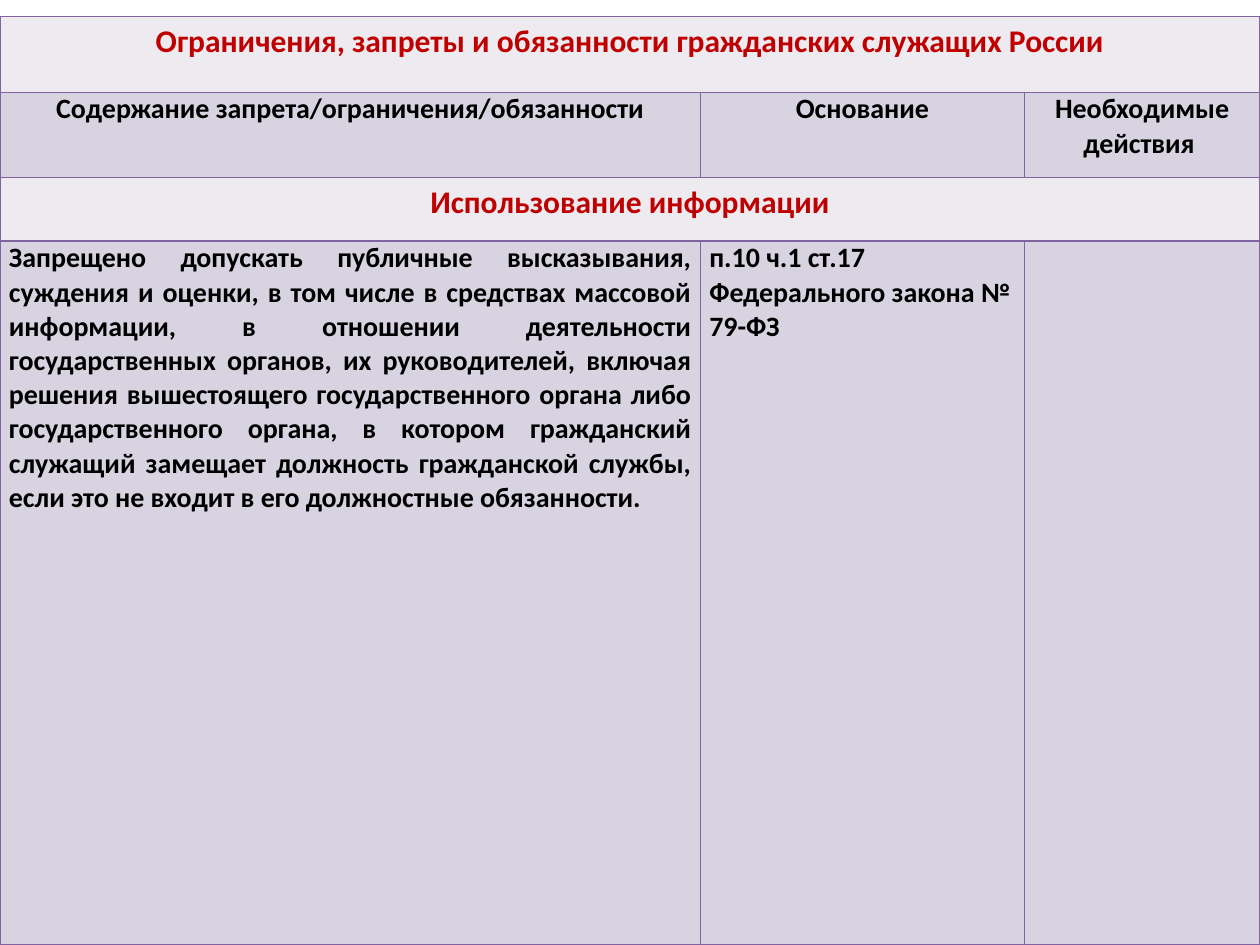
from lxml import etree
from pptx import Presentation
from pptx.dml.color import RGBColor
from pptx.enum.text import PP_ALIGN
from pptx.oxml.ns import qn
from pptx.util import Cm, Pt

CENTER, JUSTIFY, LEFT = PP_ALIGN.CENTER, PP_ALIGN.JUSTIFY, PP_ALIGN.LEFT

THEME = {
    "font": "Calibri",
    "heading": {"size": 18, "color": "C00000", "fill": "EDEAF0"},
    "body": {"size": 16, "color": "000000", "fill": "D8D3E0"},
    "border": "8064A2",
    "border_width": 1,
}

COLUMN_WIDTHS = (14.12, 6.53, 4.75)
TABLE_TOP = 0.33
INSET = 0.18

ROWS = [
    (1.53, "heading", [("Ограничения, запреты и обязанности гражданских служащих России", CENTER)]),
    (1.72, "body", [
        ("Содержание запрета/ограничения/обязанности", CENTER),
        ("Основание", CENTER),
        ("Необходимые действия ", CENTER),
    ]),
    (1.28, "heading", [("Использование информации", CENTER)]),
    (14.19, "body", [
        ("Запрещено допускать публичные высказывания, суждения и оценки, "
         "в том числе в средствах массовой информации, в отношении деятельности "
         "государственных органов, их руководителей, включая решения вышестоящего "
         "государственного органа либо государственного органа, в котором "
         "гражданский служащий замещает должность гражданской службы, если это "
         "не входит в его должностные обязанности.", JUSTIFY),
        ("п.10 ч.1 ст.17 Федерального закона № 79-ФЗ", LEFT),
        ("", LEFT),
    ]),
]


def add_borders(cell):
    properties = cell._tc.get_or_add_tcPr()
    for position, side in enumerate(("lnL", "lnR", "lnT", "lnB")):
        line = etree.Element(qn(f"a:{side}"), w=str(Pt(THEME["border_width"])))
        fill = etree.SubElement(line, qn("a:solidFill"))
        etree.SubElement(fill, qn("a:srgbClr"), val=THEME["border"])
        properties.insert(position, line)


def write_cell(cell, text, alignment, style):
    cell.text = text
    paragraph = cell.text_frame.paragraphs[0]
    paragraph.alignment = alignment
    font = paragraph.font
    font.name = THEME["font"]
    font.size = Pt(style["size"])
    font.bold = True
    font.color.rgb = RGBColor.from_string(style["color"])


def main():
    presentation = Presentation()
    presentation.slide_width, presentation.slide_height = Cm(25.4), Cm(19.05)
    slide = presentation.slides.add_slide(presentation.slide_layouts[6])

    table = slide.shapes.add_table(
        len(ROWS), len(COLUMN_WIDTHS), 0, Cm(TABLE_TOP),
        Cm(sum(COLUMN_WIDTHS)), Cm(sum(height for height, _, _ in ROWS)),
    ).table
    for column, width in zip(table.columns, COLUMN_WIDTHS):
        column.width = Cm(width)

    for row, (height, role, entries) in zip(table.rows, ROWS):
        row.height = Cm(height)
        cells = list(row.cells)
        style = THEME[role]
        for cell in cells:
            cell.fill.solid()
            cell.fill.fore_color.rgb = RGBColor.from_string(style["fill"])
            add_borders(cell)
            if role == "body":
                cell.margin_left = cell.margin_right = Cm(INSET)
                cell.margin_top = cell.margin_bottom = 0
        if role == "heading":
            cells[0].merge(cells[-1])
        for cell, (text, alignment) in zip(cells, entries):
            write_cell(cell, text, alignment, style)

    presentation.save("out.pptx")


if __name__ == "__main__":
    main()
